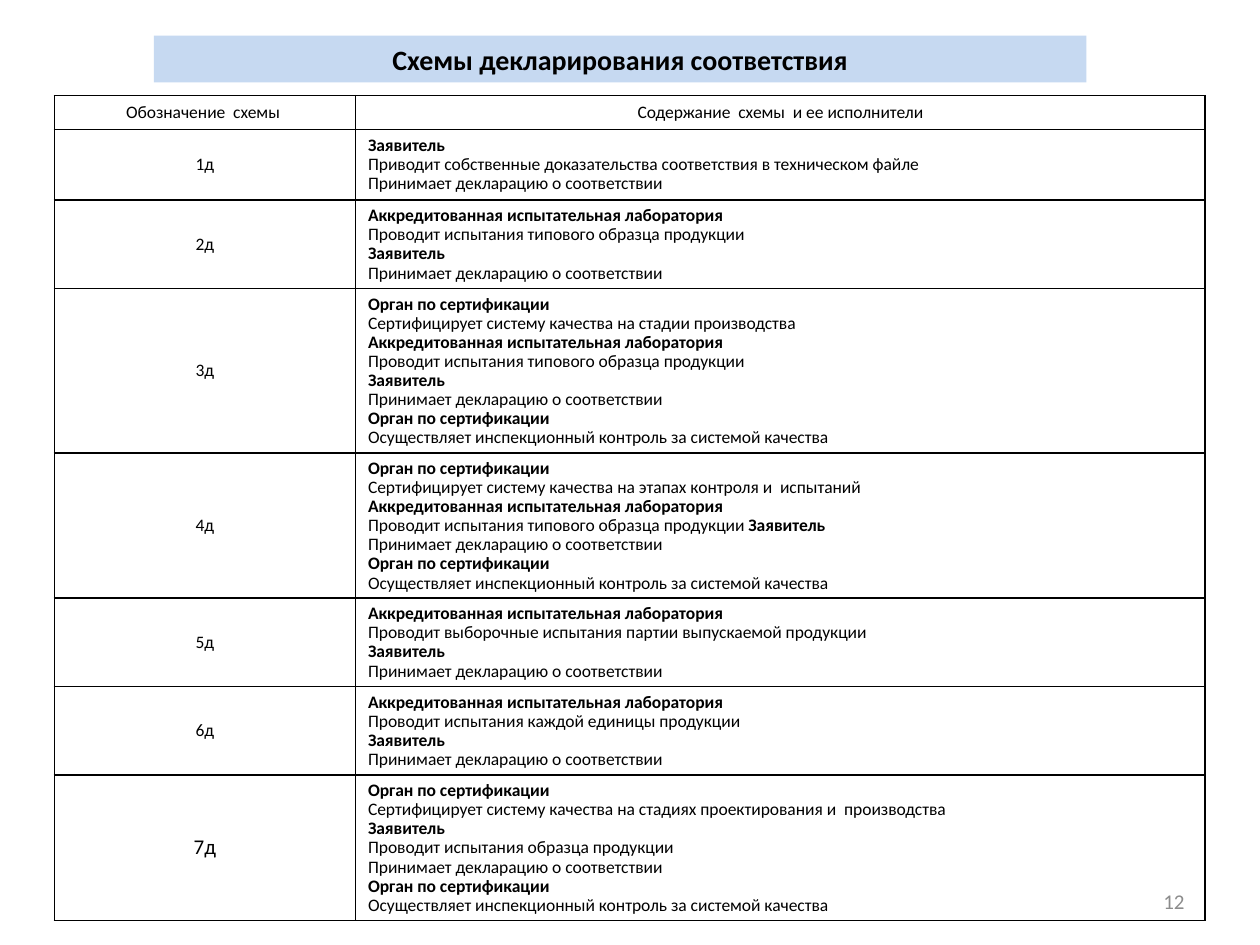
from lxml import etree
from pptx import Presentation
from pptx.dml.color import RGBColor
from pptx.enum import shapes, text
from pptx.oxml import ns
from pptx.util import Pt

BLACK = RGBColor(0x00, 0x00, 0x00)
GREY = RGBColor(0x8C, 0x8C, 0x8C)
PALE_BLUE = RGBColor(0xC6, 0xD9, 0xF1)

BODY = Protest = "Орган по сертификации"
LAB = "Аккредитованная испытательная лаборатория"
APPLICANT = "Заявитель"
PERFORMERS = {BODY, LAB, APPLICANT}
DECLARES = "Принимает декларацию о соответствии"
TESTS_SAMPLE = "Проводит испытания типового образца продукции"
INSPECTS = "Осуществляет инспекционный контроль за системой качества"

SCHEMES = [
    ("1д", 40.3, 10, [
        [APPLICANT],
        ["Приводит собственные доказательства соответствия в техническом файле"],
        [DECLARES]]),
    ("2д", 50.4, 10, [[LAB], [TESTS_SAMPLE], [APPLICANT], [DECLARES]]),
    ("3д", 93.6, 10, [
        [BODY], ["Сертифицирует систему качества на стадии производства"],
        [LAB], [TESTS_SAMPLE], [APPLICANT], [DECLARES], [BODY], [INSPECTS]]),
    ("4д", 82.8, 10, [
        [BODY], ["Сертифицирует систему качества на этапах контроля и  испытаний"],
        [LAB], [TESTS_SAMPLE, " " + APPLICANT], [DECLARES], [BODY], [INSPECTS]]),
    ("5д", 50.4, 10, [
        [LAB], ["Проводит выборочные испытания партии выпускаемой продукции"],
        [APPLICANT], [DECLARES]]),
    ("6д", 50.4, 10, [
        [LAB], ["Проводит испытания каждой единицы продукции"],
        [APPLICANT], [DECLARES]]),
    ("7д", 82.8, 12, [
        [BODY],
        ["Сертифицирует систему качества на стадиях проектирования и  производства"],
        [APPLICANT], ["Проводит испытания образца продукции"], [DECLARES],
        [BODY], [INSPECTS]]),
]


def write(paragraph, runs, size, align, color=BLACK, bold=False, spacing=None):
    paragraph.alignment = align
    paragraph.line_spacing = spacing
    for words in runs:
        run = paragraph.add_run()
        run.text = words
        run.font.color.rgb = color
        look = {"name": "Calibri", "size": Pt(size),
                "bold": bold or words.strip() in PERFORMERS}
        for key, value in look.items():
            setattr(run.font, key, value)


def outline(cell):
    properties = cell._tc.get_or_add_tcPr()
    for side in ("a:lnL", "a:lnR", "a:lnT", "a:lnB"):
        line = etree.SubElement(properties, ns.qn(side), w=str(Pt(1)))
        solid = etree.SubElement(line, ns.qn("a:solidFill"))
        etree.SubElement(solid, ns.qn("a:srgbClr"), val=str(BLACK))
    cell.fill.background()


deck = Presentation()
deck.slide_width, deck.slide_height = Pt(720), Pt(540)
slide = deck.slides.add_slide(deck.slide_layouts[6])

page_number = slide.shapes.add_textbox(Pt(516), Pt(500.5), Pt(168), Pt(28.75)).text_frame
page_number.word_wrap = True
page_number.vertical_anchor = text.MSO_ANCHOR.MIDDLE
write(page_number.paragraphs[0], ["12"], 12, text.PP_ALIGN.RIGHT, GREY)

heights = [19.4] + [height for _, height, _, _ in SCHEMES]
schemes = slide.shapes.add_table(len(heights), 2, Pt(31), Pt(54.7),
                                 Pt(658), Pt(sum(heights))).table
for column, width in zip(schemes.columns, (172.1, 485.6)):
    column.width = Pt(width)
for row, height in zip(schemes.rows, heights):
    row.height = Pt(height)
for cell in schemes.iter_cells():
    outline(cell)

headings = ("Обозначение  схемы ", "Содержание  схемы  и ее исполнители")
for column, heading in enumerate(headings):
    write(schemes.cell(0, column).text_frame.paragraphs[0], [heading], 10,
          text.PP_ALIGN.CENTER)

for index, (code, _, code_size, steps) in enumerate(SCHEMES, 1):
    code_cell = schemes.cell(index, 0)
    code_cell.vertical_anchor = text.MSO_ANCHOR.MIDDLE
    write(code_cell.text_frame.paragraphs[0], [code], code_size, text.PP_ALIGN.CENTER)
    content = schemes.cell(index, 1).text_frame
    align = text.PP_ALIGN.LEFT if code == "2д" else text.PP_ALIGN.JUSTIFY
    for position, step in enumerate(steps):
        paragraph = content.add_paragraph() if position else content.paragraphs[0]
        write(paragraph, step, 10, align, spacing=0.9)

title = slide.shapes.add_shape(shapes.MSO_SHAPE.RECTANGLE,
                               Pt(88), Pt(20.4), Pt(532.8), Pt(26.7))
title.shadow.inherit = False
title.fill.solid()
title.fill.fore_color.rgb = PALE_BLUE
title.line.fill.background()
title.text_frame.word_wrap = True
write(title.text_frame.paragraphs[0], ["Схемы декларирования соответствия"], 16,
      text.PP_ALIGN.CENTER, bold=True)

deck.save("out.pptx")
